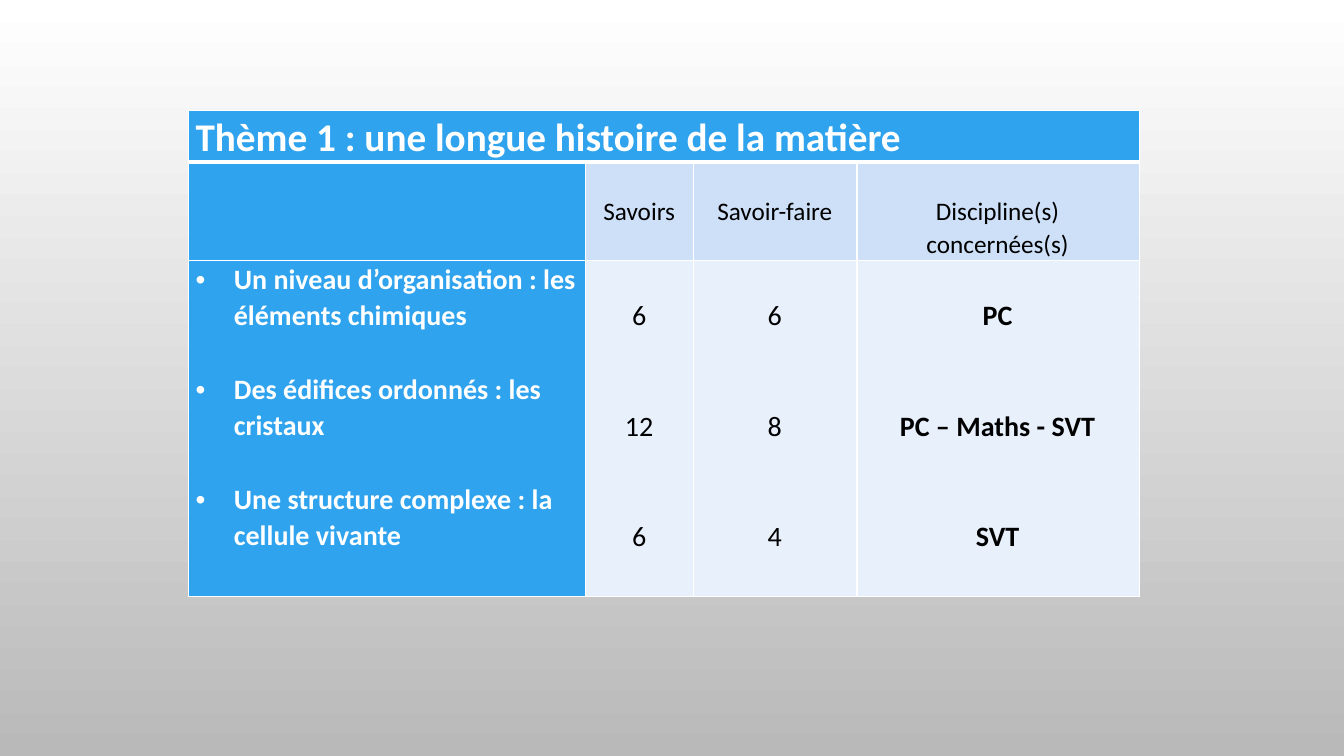
from lxml.etree import SubElement
from pptx import Presentation
from pptx.dml.color import RGBColor
from pptx.enum.text import PP_ALIGN as Align
from pptx.oxml.ns import qn
from pptx.util import Inches, Pt

WHITE = RGBColor(0xFF, 0xFF, 0xFF)
BLACK = RGBColor(0, 0, 0)
GREY = RGBColor(0xB9, 0xB9, 0xB9)
BLUE = RGBColor(0x2F, 0xA3, 0xEE)
HEADING_BLUE = RGBColor(0xCD, 0xE0, 0xF8)
PALE_BLUE = RGBColor(0xE8, 0xF0, 0xFC)

THEME = "Thème 1 : une longue histoire de la matière"
HEADINGS = ["Savoirs", "Savoir-faire", "Discipline(s) concernées(s)"]
TOPICS = [
    ("Un niveau d’organisation : les éléments chimiques", "6", "6", "PC"),
    ("Des édifices ordonnés : les cristaux", "12", "8", "PC – Maths - SVT"),
    ("Une structure complexe : la cellule vivante", "6", "4", "SVT"),
]
COLUMN_WIDTHS = [3.94, 1.07, 1.62, 2.8]
ROW_HEIGHTS = [0.48, 0.97, 3.34]
LEFT, TOP = 1.87, 1.1
LINE_SPACING = 1.07
TOPIC_LINE = 26.2
BULLET_INDENT = 0.38

THEME_FONT = {"name": "Calibri", "size": Pt(28), "bold": True}
HEADING_FONT = {"name": "Calibri", "size": Pt(18), "bold": False}
TOPIC_FONT = {"name": "Calibri", "size": Pt(20), "bold": True}
COUNT_FONT = {**TOPIC_FONT, "bold": False}


def set_all(target, values):
    for name, value in values.items():
        setattr(target, name, value)


def add_borders(cell, top=1, bottom=1):
    properties = cell._tc.get_or_add_tcPr()
    for side, points in {"L": 1, "R": 1, "T": top, "B": bottom}.items():
        line = SubElement(properties, qn(f"a:ln{side}"), w=str(Pt(points)))
        fill = SubElement(line, qn("a:solidFill"))
        SubElement(fill, qn("a:srgbClr"), val=str(WHITE))


def paint(cell, colour):
    cell.fill.solid()
    cell.fill.fore_color.rgb = colour


def add_bullet(paragraph):
    properties = paragraph._p.get_or_add_pPr()
    properties.set("marL", str(Inches(BULLET_INDENT)))
    properties.set("indent", str(-Inches(BULLET_INDENT)))
    SubElement(properties, qn("a:buFont"), typeface="Arial")
    SubElement(properties, qn("a:buChar"), char="•")


def write(cell, texts, font, colour, align=Align.CENTER, top=0, gap=0, bullets=False):
    cell.margin_top = Inches(top)
    for i, text in enumerate(texts):
        paragraph = cell.text_frame.paragraphs[0] if i == 0 else cell.text_frame.add_paragraph()
        if bullets:
            add_bullet(paragraph)
        set_all(paragraph, {"alignment": align, "line_spacing": LINE_SPACING})
        if i:
            paragraph.space_before = Pt(gap)
        run = paragraph.add_run()
        run.text = text
        set_all(run.font, font)
        run.font.color.rgb = colour


def main():
    deck = Presentation()
    set_all(deck, {"slide_width": Inches(13.33), "slide_height": Inches(7.5)})
    slide = deck.slides.add_slide(deck.slide_layouts[6])

    backdrop = slide.background.fill
    backdrop.gradient()
    backdrop.gradient_angle = 270
    for stop, colour in zip(backdrop.gradient_stops, (WHITE, GREY)):
        stop.color.rgb = colour

    programme = slide.shapes.add_table(
        len(ROW_HEIGHTS), len(COLUMN_WIDTHS), Inches(LEFT), Inches(TOP),
        Inches(sum(COLUMN_WIDTHS)), Inches(sum(ROW_HEIGHTS))).table
    for column, width in zip(programme.columns, COLUMN_WIDTHS):
        column.width = Inches(width)
    for row, height in zip(programme.rows, ROW_HEIGHTS):
        row.height = Inches(height)

    row_fills = [BLUE, HEADING_BLUE, PALE_BLUE]
    for r, row_fill in enumerate(row_fills):
        for c in range(len(COLUMN_WIDTHS)):
            cell = programme.cell(r, c)
            set_all(cell, {"margin_left": Inches(0.07), "margin_right": Inches(0.08),
                           "margin_top": 0, "margin_bottom": 0})
            add_borders(cell, top=3 if r == 1 else 1, bottom=3 if r == 0 else 1)
            paint(cell, row_fill if c else BLUE)

    programme.cell(0, 0).merge(programme.cell(0, len(COLUMN_WIDTHS) - 1))
    write(programme.cell(0, 0), [THEME], THEME_FONT, WHITE, Align.LEFT)
    for c, heading in enumerate(HEADINGS, 1):
        write(programme.cell(1, c), [heading], HEADING_FONT, BLACK, top=0.32)

    names, *details = zip(*TOPICS)
    write(programme.cell(2, 0), names, TOPIC_FONT, WHITE, Align.LEFT,
          gap=TOPIC_LINE, bullets=True)
    for c, (values, font) in enumerate(zip(details, (COUNT_FONT, COUNT_FONT, TOPIC_FONT)), 1):
        write(programme.cell(2, c), values, font, BLACK,
              top=TOPIC_LINE / 72, gap=2 * TOPIC_LINE)

    deck.save("out.pptx")


if __name__ == "__main__":
    main()
